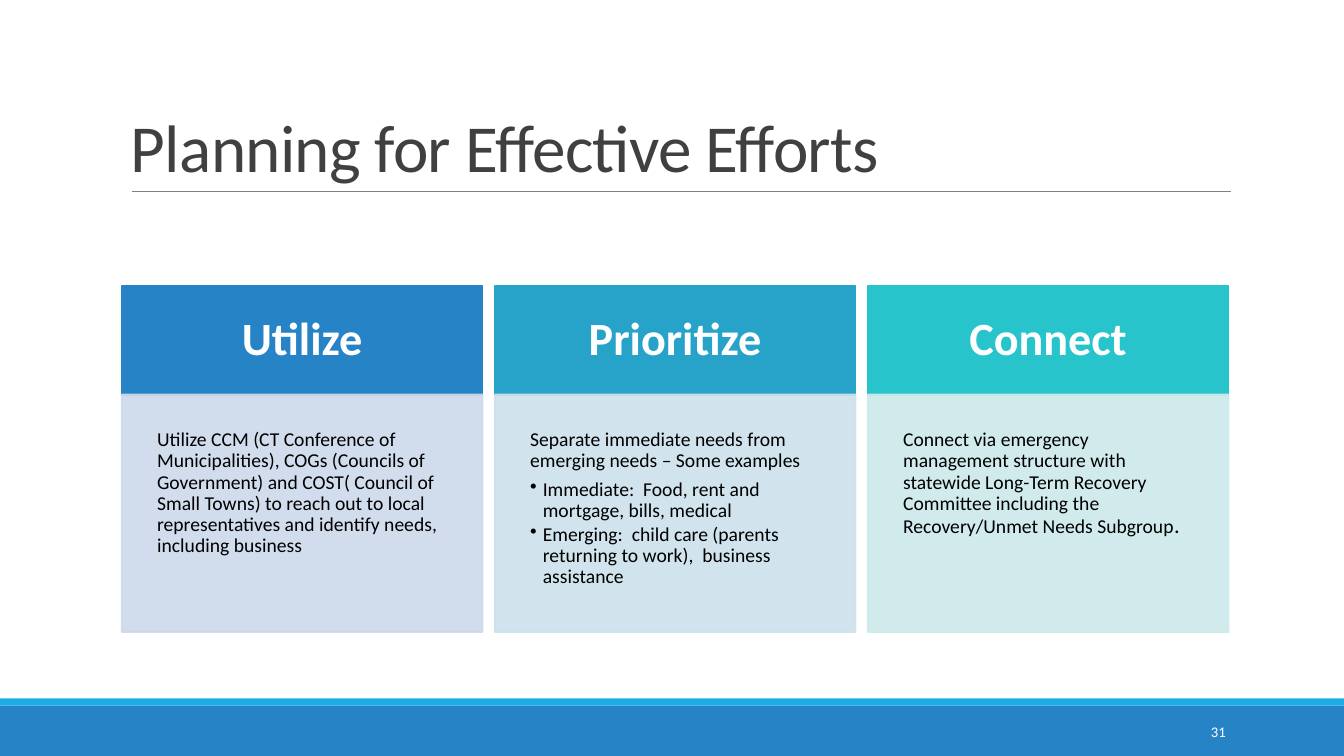
from dataclasses import dataclass

from lxml.etree import SubElement
from pptx import Presentation
from pptx.dml.color import RGBColor
from pptx.enum.shapes import MSO_CONNECTOR, MSO_SHAPE
from pptx.enum.text import MSO_ANCHOR, PP_ALIGN
from pptx.oxml.ns import qn
from pptx.shapes.autoshape import Shape
from pptx.slide import Slide
from pptx.text.text import _Paragraph
from pptx.util import Cm, Length, Pt

FONT = "Calibri"
WHITE = RGBColor(0xFF, 0xFF, 0xFF)
BLACK = RGBColor(0x00, 0x00, 0x00)
CHARCOAL = RGBColor(0x40, 0x40, 0x40)
GREY = RGBColor(0x80, 0x80, 0x80)
BLUE = RGBColor(0x26, 0x83, 0xC6)
SKY = RGBColor(0x1C, 0xAD, 0xE4)
TEAL = RGBColor(0x27, 0xA3, 0xC9)
TURQUOISE = RGBColor(0x28, 0xC4, 0xCC)
PALE_BLUE = RGBColor(0xCD, 0xD9, 0xEA)
PALE_TEAL = RGBColor(0xCD, 0xE1, 0xEB)
PALE_TURQUOISE = RGBColor(0xCD, 0xE9, 0xEC)

SLIDE_WIDTH, SLIDE_HEIGHT = Cm(33.87), Cm(19.05)
COLUMN_LEFT, COLUMN_WIDTH, COLUMN_PITCH = Cm(3.07), Cm(9.09), Cm(9.4)
HEADING_TOP, HEADING_HEIGHT = Cm(7.21), Cm(2.74)
DETAIL_TOP, DETAIL_HEIGHT = Cm(9.94), Cm(5.99)


@dataclass(frozen=True)
class Column:
    heading: str
    color: RGBColor
    pale: RGBColor
    detail: str
    examples: tuple[str, ...] = ()
    ending: str = ""


COLUMNS = (
    Column(
        "Utilize", BLUE, PALE_BLUE,
        "Utilize CCM (CT Conference of Municipalities), COGs (Councils of "
        "Government) and COST( Council of Small Towns) to reach out to local "
        "representatives and identify needs, including business",
    ),
    Column(
        "Prioritize", TEAL, PALE_TEAL,
        "Separate immediate needs from emerging needs – Some examples",
        examples=(
            "Immediate:  Food, rent and mortgage, bills, medical",
            "Emerging:  child care (parents returning to work),  business assistance",
        ),
    ),
    Column(
        "Connect", TURQUOISE, PALE_TURQUOISE,
        "Connect via emergency management structure with statewide Long-Term "
        "Recovery Committee including the Recovery/Unmet Needs Subgroup",
        ending=".",
    ),
)


def format_runs(paragraph: _Paragraph, size: float, color: RGBColor, bold: bool = False) -> None:
    for run in paragraph.runs:
        run.font.name = FONT
        run.font.size = Pt(size)
        run.font.color.rgb = color
        run.font.bold = bold


def space_lines(paragraph: _Paragraph, after: float, align: PP_ALIGN = PP_ALIGN.LEFT) -> None:
    paragraph.alignment = align
    paragraph.line_spacing = 0.9
    paragraph.space_before = Pt(0)
    paragraph.space_after = Pt(after)


def add_bullet(paragraph: _Paragraph) -> None:
    paragraph.level = 1
    properties = paragraph._p.get_or_add_pPr()
    properties.set("marL", str(Cm(0.32)))
    properties.set("indent", str(Cm(-0.32)))
    SubElement(properties, qn("a:buChar")).set("char", "•")


def set_frame(shape: Shape, inset: Length, anchor: MSO_ANCHOR) -> None:
    frame = shape.text_frame
    frame.word_wrap = True
    frame.vertical_anchor = anchor
    frame.margin_left = frame.margin_right = inset
    frame.margin_top = frame.margin_bottom = inset


def add_block(slide: Slide, left: Length, top: Length, width: Length, height: Length,
              color: RGBColor) -> Shape:
    block = slide.shapes.add_shape(MSO_SHAPE.RECTANGLE, left, top, width, height)
    block.shadow.inherit = False
    block.fill.solid()
    block.fill.fore_color.rgb = color
    block.line.fill.background()
    return block


def outline(block: Shape, color: RGBColor) -> None:
    block.line.color.rgb = color
    block.line.width = Pt(1.25)


def make_translucent(block: Shape) -> None:
    for color in block._element.spPr.iter(qn("a:srgbClr")):
        SubElement(color, qn("a:alpha")).set("val", "90000")


def add_label(slide: Slide, left: Length, top: Length, width: Length, height: Length,
              text: str, size: float, color: RGBColor, anchor: MSO_ANCHOR) -> _Paragraph:
    frame = slide.shapes.add_textbox(left, top, width, height).text_frame
    frame.word_wrap = True
    frame.vertical_anchor = anchor
    frame.text = text
    format_runs(frame.paragraphs[0], size, color)
    return frame.paragraphs[0]


def add_column(slide: Slide, left: Length, column: Column) -> None:
    heading = add_block(slide, left, HEADING_TOP, COLUMN_WIDTH, HEADING_HEIGHT, column.color)
    outline(heading, column.color)
    set_frame(heading, Cm(0.71), MSO_ANCHOR.MIDDLE)
    heading.text_frame.text = column.heading
    title = heading.text_frame.paragraphs[0]
    space_lines(title, 11.5, PP_ALIGN.CENTER)
    format_runs(title, 33, WHITE, bold=True)

    detail = add_block(slide, left, DETAIL_TOP, COLUMN_WIDTH, DETAIL_HEIGHT, column.pale)
    outline(detail, column.pale)
    make_translucent(detail)
    set_frame(detail, Cm(0.89), MSO_ANCHOR.TOP)
    detail.text_frame.text = column.detail
    summary = detail.text_frame.paragraphs[0]
    space_lines(summary, 5)
    format_runs(summary, 14, BLACK)
    if column.ending:
        ending = summary.add_run()
        ending.text = column.ending
        ending.font.name = FONT
        ending.font.size = Pt(16)
        ending.font.color.rgb = BLACK
    for text in column.examples:
        example = detail.text_frame.add_paragraph()
        example.text = text
        space_lines(example, 2)
        add_bullet(example)
        format_runs(example, 14, BLACK)


def main() -> None:
    presentation = Presentation()
    presentation.slide_width, presentation.slide_height = SLIDE_WIDTH, SLIDE_HEIGHT
    slide = presentation.slides.add_slide(presentation.slide_layouts[6])

    add_block(slide, Cm(0), Cm(17.78), SLIDE_WIDTH, Cm(1.27), BLUE)
    add_block(slide, Cm(0), Cm(17.6), SLIDE_WIDTH, Cm(0.18), SKY)

    title_rule = slide.shapes.add_connector(
        MSO_CONNECTOR.STRAIGHT, Cm(3.33), Cm(4.83), Cm(31.01), Cm(4.83))
    title_rule.line.color.rgb = GREY
    title_rule.line.width = Pt(0.5)
    SubElement(title_rule._element.spPr, qn("a:effectLst"))

    title = add_label(slide, Cm(3.05), Cm(0.79), Cm(27.94), Cm(4.04),
                      "Planning for Effective Efforts", 48, CHARCOAL, MSO_ANCHOR.BOTTOM)
    title.line_spacing = 0.85
    title.runs[0].font._element.set("spc", "-50")

    for index, column in enumerate(COLUMNS):
        add_column(slide, COLUMN_LEFT + index * COLUMN_PITCH, column)

    page_number = add_label(slide, Cm(27.51), Cm(17.93), Cm(3.63), Cm(1.02),
                            "31", 10.5, WHITE, MSO_ANCHOR.MIDDLE)
    page_number.alignment = PP_ALIGN.RIGHT

    presentation.save("out.pptx")


if __name__ == "__main__":
    main()
